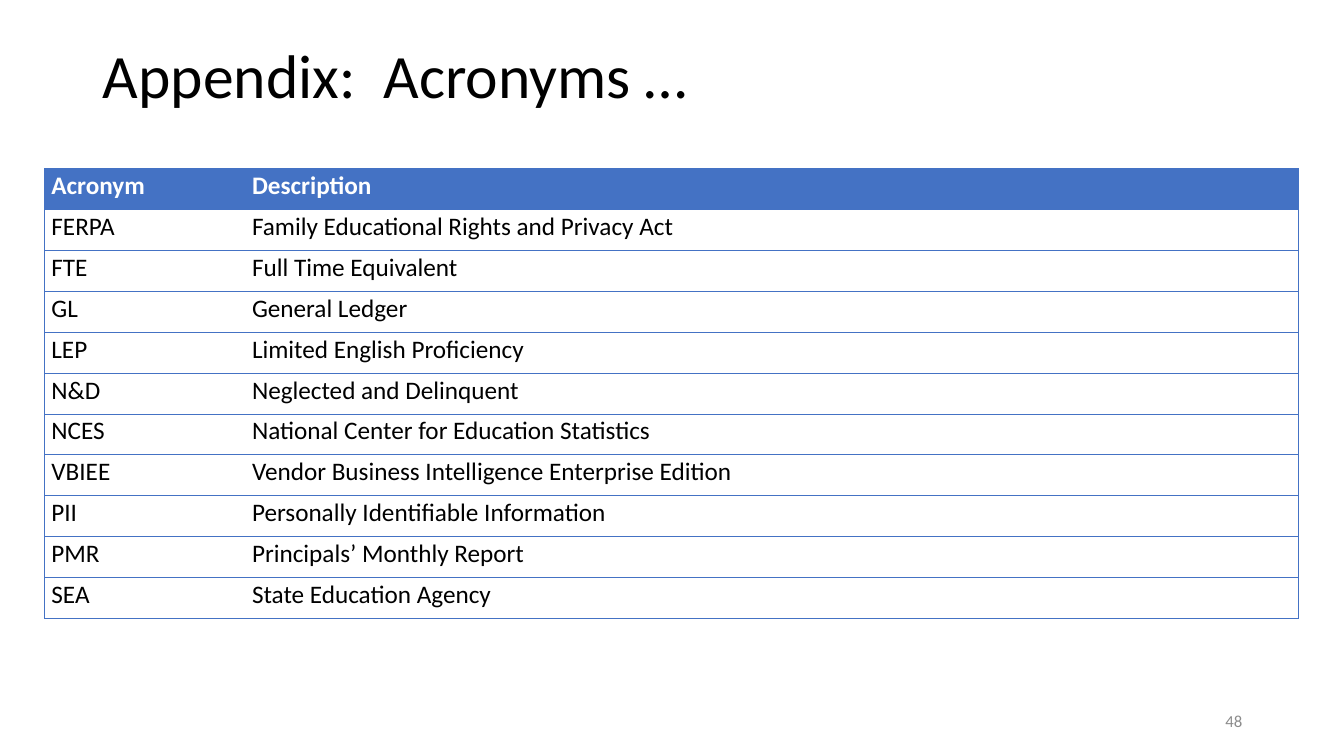
from lxml.etree import SubElement
from pptx import Presentation
from pptx.dml.color import RGBColor
from pptx.enum.text import MSO_ANCHOR, PP_ALIGN
from pptx.oxml.ns import qn
from pptx.util import Inches, Pt

FONT = "Calibri"
BLUE, WHITE, BLACK, GRAY = "4472C4", "FFFFFF", "000000", "8C8C8C"
COLUMN_WIDTHS = (1.99, 10.45)
ROW_HEIGHT = 0.406
ACRONYMS = [
    ("Acronym", "Description"),
    ("FERPA", "Family Educational Rights and Privacy Act"),
    ("FTE", "Full Time Equivalent"),
    ("GL", "General Ledger"),
    ("LEP", "Limited English Proficiency"),
    ("N&D", "Neglected and Delinquent"),
    ("NCES", "National Center for Education Statistics"),
    ("VBIEE", "Vendor Business Intelligence Enterprise Edition"),
    ("PII", "Personally Identifiable Information"),
    ("PMR", "Principals’ Monthly Report"),
    ("SEA", "State Education Agency"),
]


def rgb(color):
    return RGBColor.from_string(color)


def add_run(p, text, size, color, bold=False):
    r = p.add_run()
    r.text = text
    r.font.name = FONT
    r.font.size = Pt(size)
    r.font.bold = bold
    r.font.color.rgb = rgb(color)


def set_borders(cell, sides):
    tcPr = cell._tc.get_or_add_tcPr()
    for side in "LRTB":
        ln = SubElement(tcPr, qn(f"a:ln{side}"), w=str(Pt(0.5)))
        if side in sides:
            fill = SubElement(ln, qn("a:solidFill"))
            SubElement(fill, qn("a:srgbClr"), val=BLUE)
        else:
            SubElement(ln, qn("a:noFill"))


def add_title(s, text):
    sp = s.shapes.title
    sp.left, sp.top = Inches(0.92), Inches(0.4)
    sp.width, sp.height = Inches(11.5), Inches(1.45)
    tf = sp.text_frame
    tf.vertical_anchor = MSO_ANCHOR.TOP
    p = tf.paragraphs[0]
    p.alignment = PP_ALIGN.LEFT
    p.line_spacing = 0.9
    add_run(p, text, 44, BLACK)


def fill_cell(cell, text, is_header, sides):
    set_borders(cell, sides)
    cell.fill.solid()
    cell.fill.fore_color.rgb = rgb(BLUE if is_header else WHITE)
    cell.margin_left = cell.margin_right = Inches(0.07)
    cell.margin_top = cell.margin_bottom = 0
    p = cell.text_frame.paragraphs[0]
    p.line_spacing = 1.07
    add_run(p, text, 18, WHITE if is_header else BLACK, is_header)


def add_acronym_table(s, rows):
    table = s.shapes.add_table(
        len(rows), len(COLUMN_WIDTHS), Inches(0.44), Inches(1.67),
        Inches(sum(COLUMN_WIDTHS)), Inches(ROW_HEIGHT * len(rows))).table
    table.horz_banding = False
    for column, width in zip(table.columns, COLUMN_WIDTHS):
        column.width = Inches(width)
    for i, texts in enumerate(rows):
        table.rows[i].height = Inches(ROW_HEIGHT)
        for j, (text, outer) in enumerate(zip(texts, "LR")):
            fill_cell(table.cell(i, j), text, i == 0, outer + "TB")


def add_slide_number(s, text):
    sp = s.shapes.add_textbox(Inches(9.42), Inches(6.95), Inches(3), Inches(0.4))
    tf = sp.text_frame
    tf.word_wrap = True
    tf.vertical_anchor = MSO_ANCHOR.MIDDLE
    p = tf.paragraphs[0]
    p.alignment = PP_ALIGN.RIGHT
    add_run(p, text, 12, GRAY)


def main():
    prs = Presentation()
    prs.slide_width, prs.slide_height = Inches(13.33), Inches(7.5)
    s = prs.slides.add_slide(prs.slide_layouts[5])
    add_slide_number(s, "48")
    add_title(s, "Appendix:  Acronyms …")
    add_acronym_table(s, ACRONYMS)
    prs.save("out.pptx")


if __name__ == "__main__":
    main()
